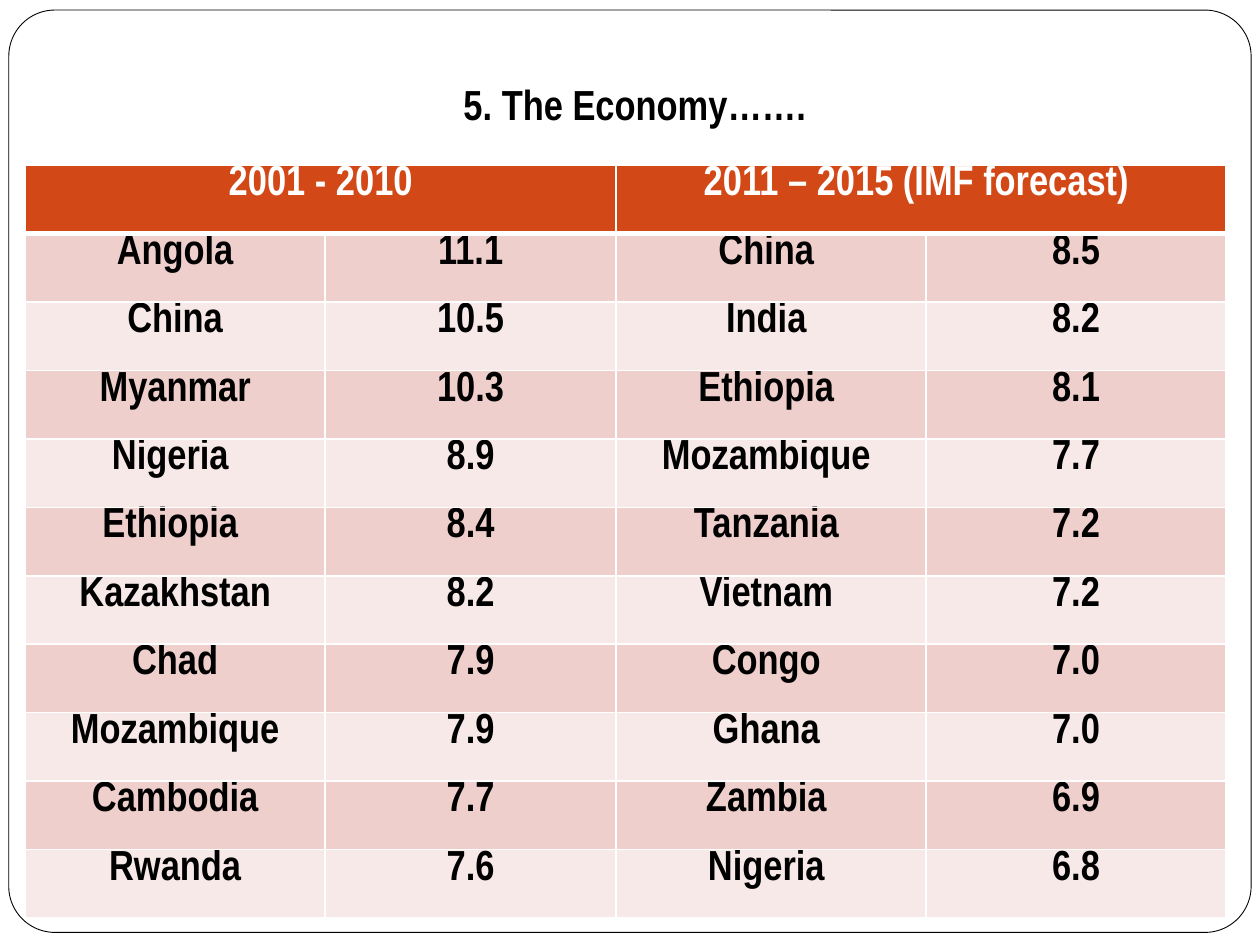
"""Builds the economy slide with a table of growth rates by country."""
from lxml.etree import SubElement as Sub
from pptx import Presentation
from pptx.dml.color import RGBColor as RGB
from pptx.enum.shapes import MSO_SHAPE as Shape
from pptx.enum.text import MSO_ANCHOR as Anchor, PP_ALIGN as Align
from pptx.oxml.ns import qn
from pptx.util import Inches, Pt

COLORS = {"white": "FFFFFF", "black": "000000", "head": "D34817",
          "dark": "EFCFCC", "light": "F7E9E8"}
HEADS = ["2001 - 2010", "2011 – 2015 (IMF forecast) "]
ROWS = [
    ("Angola", "11.1", "China ", "8.5"),
    ("China", "10.5", "India ", "8.2"),
    ("Myanmar", "10.3", "Ethiopia ", "8.1"),
    ("Nigeria ", "8.9", "Mozambique ", "7.7"),
    ("Ethiopia ", "8.4", "Tanzania ", "7.2"),
    ("Kazakhstan", "8.2", "Vietnam ", "7.2"),
    ("Chad", "7.9", "Congo ", "7.0"),
    ("Mozambique", "7.9", "Ghana ", "7.0"),
    ("Cambodia", "7.7", "Zambia ", "6.9"),
    ("Rwanda", "7.6", "Nigeria ", "6.8"),
]
WIDTHS = [2.38, 2.31, 2.46, 2.38]


def write(frame, text, color):
    frame.text = text
    para = frame.paragraphs[0]
    para.alignment = Align.CENTER
    font = para.font
    font.name, font.size, font.bold = "Arial Narrow", Pt(24), True
    font.color.rgb = RGB.from_string(COLORS[color])


def border(cell, side, width):
    line = Sub(cell._tc.get_or_add_tcPr(), qn(f"a:ln{side}"), w=str(Pt(width)))
    Sub(Sub(line, qn("a:solidFill")), qn("a:srgbClr"), val=COLORS["white"])


deck = Presentation()
deck.slide_width, deck.slide_height = Inches(10), Inches(7.5)
slide = deck.slides.add_slide(deck.slide_layouts[5])

frame = slide.shapes.add_shape(Shape.ROUNDED_RECTANGLE, Inches(0.07),
                               Inches(0.08), Inches(9.86), Inches(7.32))
frame.adjustments[0] = 0.05
frame.shadow.inherit = False
frame.fill.solid()
frame.fill.fore_color.rgb = RGB.from_string(COLORS["white"])
frame.line.color.rgb = RGB.from_string(COLORS["black"])
frame.line.width = Pt(0.5)
slide.shapes._spTree.insert(2, frame._element)

title = slide.shapes.title
title.left, title.top = Inches(0), Inches(0.52)
title.width, title.height = Inches(10), Inches(0.6)
title.text_frame.vertical_anchor = Anchor.MIDDLE
write(title.text_frame, " 5. The Economy…….", "black")

table = slide.shapes.add_table(len(ROWS) + 1, len(WIDTHS), Inches(0.2),
                               Inches(1.31), Inches(9.53), Inches(5.98)).table
for col, width in zip(table.columns, WIDTHS):
    col.width = Inches(width)

grid = [(HEADS[0], "", HEADS[1], "")] + ROWS
for r, row in enumerate(grid):
    shade = "head" if r == 0 else "dark" if r % 2 else "light"
    for c, text in enumerate(row):
        cell = table.cell(r, c)
        cell.margin_top = cell.margin_bottom = 0
        border(cell, "L", 1)
        border(cell, "R", 1)
        border(cell, "T", 3 if r == 1 else 1)
        border(cell, "B", 3 if r == 0 else 1)
        cell.fill.solid()
        cell.fill.fore_color.rgb = RGB.from_string(COLORS[shade])
        if text:
            write(cell.text_frame, text, "black" if r else "white")
for c in (0, 2):
    table.cell(0, c).merge(table.cell(0, c + 1))

deck.save("out.pptx")
